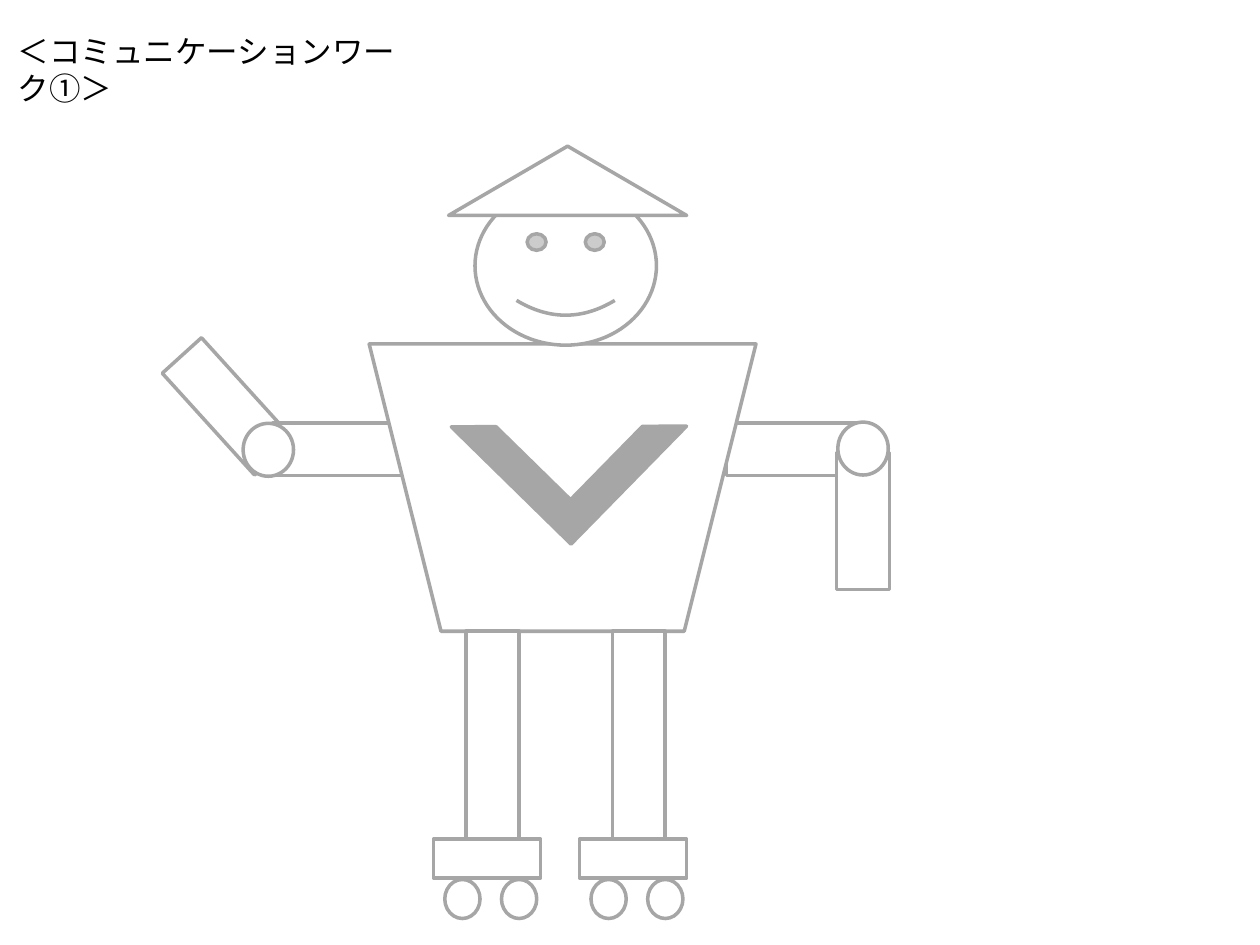
from lxml.etree import SubElement
from pptx import Presentation
from pptx.dml.color import RGBColor
from pptx.enum.shapes import MSO_SHAPE
from pptx.enum.text import MSO_ANCHOR, MSO_AUTO_SIZE, PP_ALIGN
from pptx.oxml.ns import qn
from pptx.util import Inches, Pt

COLORS = {"white": "FFFFFF", "gray": "A6A6A6", "black": "000000"}
FONT = "Noto Sans CJK JP"


class RobotSlide:
    """Holds the style and the current slide."""

    def __init__(self, prs):
        self.s = prs.slides.add_slide(prs.slide_layouts[5])

    def color(self, name):
        return RGBColor.from_string(COLORS[name])

    def title(self, text, left, top, width, height):
        sp = self.s.shapes.title
        sp.left, sp.top = Inches(left), Inches(top)
        sp.width, sp.height = Inches(width), Inches(height)
        tf = sp.text_frame
        frame = {"word_wrap": True, "auto_size": MSO_AUTO_SIZE.NONE,
                 "vertical_anchor": MSO_ANCHOR.TOP}
        for name, value in frame.items():
            setattr(tf, name, value)
        p = tf.paragraphs[0]
        p.alignment = PP_ALIGN.LEFT
        r = p.add_run()
        r.text = text
        for name, value in {"size": Pt(18), "bold": False, "name": FONT}.items():
            setattr(r.font, name, value)
        r.font.color.rgb = self.color("black")
        SubElement(r._r.get_or_add_rPr(), qn("a:ea"), typeface=FONT)

    def outline(self, kind, left, top, width, height, rotation=0, fill="white"):
        sp = self.s.shapes.add_shape(kind, Inches(left), Inches(top),
                                     Inches(width), Inches(height))
        sp.shadow.inherit = False
        sp.rotation = rotation
        sp.fill.solid()
        sp.fill.fore_color.rgb = self.color(fill)
        sp.line.color.rgb = self.color("gray")
        sp.line.width = Pt(2)
        return sp

    def limb(self, left, top, length, rotation=0):
        self.outline(MSO_SHAPE.RECTANGLE, left, top, 0.42, length, rotation)

    def joint(self, left, top):
        self.outline(MSO_SHAPE.OVAL, left, top, 0.4, 0.42)

    def leg(self, left):
        self.limb(left, 5.01, 1.65)
        self.outline(MSO_SHAPE.RECTANGLE, left - 0.26, 6.66, 0.85, 0.31)
        for offset in (-0.17, 0.28):
            self.outline(MSO_SHAPE.OVAL, left + offset, 6.98, 0.28, 0.31)


def main():
    prs = Presentation()
    prs.slide_width, prs.slide_height = Inches(10), Inches(7.5)
    robot = RobotSlide(prs)
    robot.title("＜コミュニケーションワーク①＞", 0.04, 0.2, 3.4, 0.4)

    # Arms that reach behind the body
    arm = 1.09
    robot.limb(6.1, 3.02, arm, 90)
    robot.limb(1.6, 2.68, arm, 317.8)
    robot.limb(2.5, 3.02, arm, 270)

    # Body and legs on wheels
    robot.outline(MSO_SHAPE.TRAPEZOID, 2.93, 2.73, 3.07, 2.28, 180)
    for left in (3.7, 4.86):
        robot.leg(left)

    # Elbows and hanging forearm
    robot.joint(1.93, 3.36)
    robot.limb(6.64, 3.59, arm)
    robot.joint(6.65, 3.35)

    # Head and hat
    robot.outline(MSO_SHAPE.SMILEY_FACE, 3.77, 1.48, 1.44, 1.26)
    robot.outline(MSO_SHAPE.ISOSCELES_TRIANGLE, 3.56, 1.16, 1.89, 0.55)

    # V mark on the chest
    mark = robot.outline(MSO_SHAPE.HALF_FRAME, 3.85, 2.73, 1.33, 1.31, 224.4, "gray")
    for i in range(2):
        mark.adjustments[i] = 0.19

    prs.save("out.pptx")


if __name__ == "__main__":
    main()
